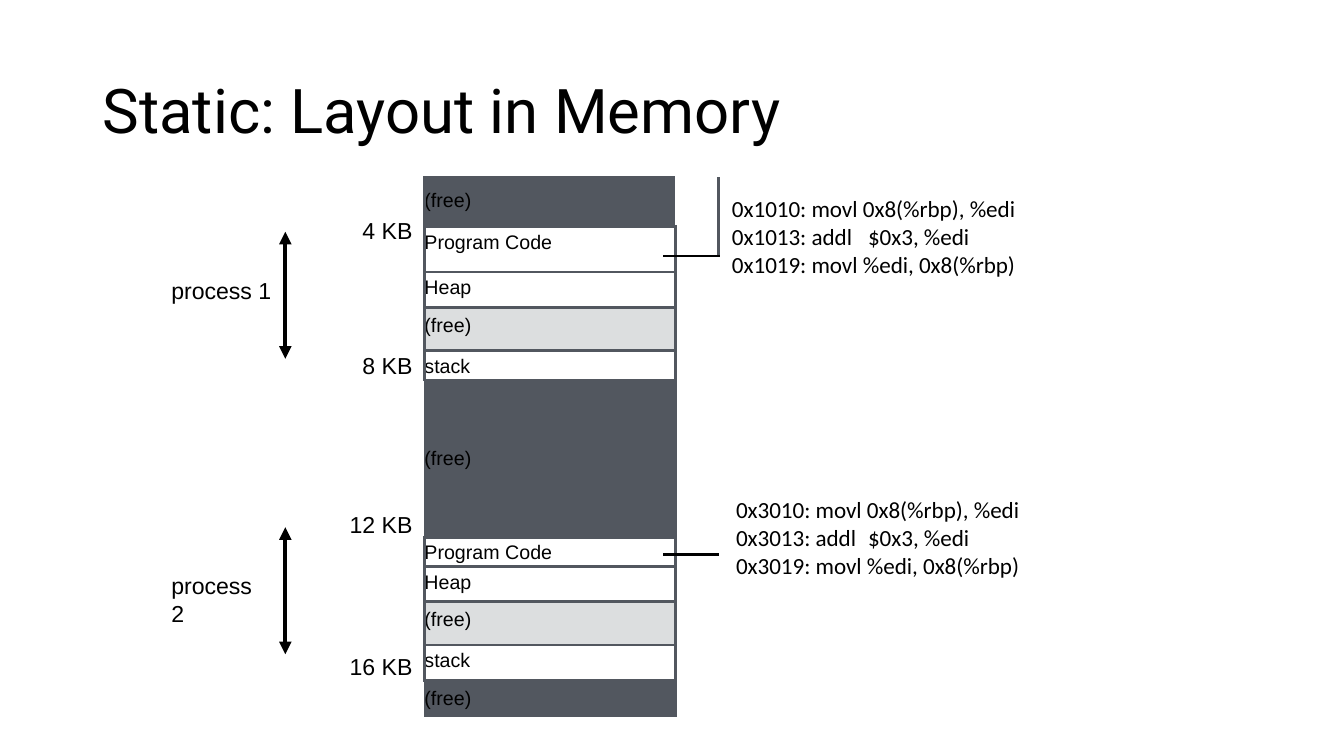
import pptx
import pptx.util
import pptx.dml.color
import pptx.enum.shapes
import pptx.enum.text
import pptx.oxml
import pptx.oxml.ns

PX = 9144  # EMU in one px, 100 px to the inch
GREY, PALE, WHITE, BLACK = "52575F", "DCDEDF", "FFFFFF", "000000"
qn = pptx.oxml.ns.qn
Align = pptx.enum.text.PP_ALIGN


def color(hex_text):
    return pptx.dml.color.RGBColor.from_string(hex_text)


def add_text(page, left, top, width, height, lines, font, align=Align.LEFT):
    box = page.shapes.add_textbox(left * PX, top * PX, width * PX, height * PX)
    frame = box.text_frame
    frame.word_wrap = True
    frame.margin_left = frame.margin_right = frame.margin_bottom = 0
    frame.margin_top = 2 * PX
    frame.text = "\n".join(lines)
    for para in frame.paragraphs:
        para.alignment = align
        para.font.name = font
        para.font.size = pptx.util.Pt(16.5)
        para.font.color.rgb = color(BLACK)
    return box


deck = pptx.Presentation()
deck.slide_width, deck.slide_height = 1333 * PX, 750 * PX
page = deck.slides.add_slide(deck.slide_layouts[5])

# Title
title = page.shapes.title
title.left, title.top, title.width, title.height = 92 * PX, 40 * PX, 1150 * PX, 145 * PX
title.text_frame.text = "Static: Layout in Memory"
title.text_frame.auto_size = pptx.enum.text.MSO_AUTO_SIZE.NONE
title.text_frame.vertical_anchor = pptx.enum.text.MSO_ANCHOR.MIDDLE
heading = title.text_frame.paragraphs[0]
heading.alignment = Align.LEFT
heading.line_spacing = 0.9
heading.font.name = "Roboto"
heading.font.size = pptx.util.Pt(44)
heading.font.color.rgb = color(BLACK)

# Memory table: label, fill, top inset, row heights
regions = [
    ("(free)", GREY, 12, [49]),
    ("Program Code", WHITE, 5, [29, 16]),
    ("Heap", WHITE, 5, [35]),
    ("(free)", PALE, 7, [43]),
    ("stack", WHITE, 5, [29]),
    ("(free)", GREY, 0, [156]),
    ("Program Code", WHITE, 5, [17, 12]),
    ("Heap", WHITE, 5, [35]),
    ("(free)", PALE, 7, [43]),
    ("stack", WHITE, 5, [35]),
    ("(free)", GREY, 7, [37]),
]
column_widths = [237, 12, 43]
row_heights = [height for region in regions for height in region[3]]
frame = page.shapes.add_table(len(row_heights), len(column_widths), 421 * PX, 176 * PX,
                              sum(column_widths) * PX, sum(row_heights) * PX)
table = frame.table
table.first_row = table.horz_banding = False
table._tbl.tblPr.find(qn("a:tableStyleId")).text = "{2D5ABB26-0587-4C30-8999-92F81FD0307C}"
for column, width in zip(table.columns, column_widths):
    column.width = width * PX
for row, height in zip(table.rows, row_heights):
    row.height = height * PX

# Fill and borders of every cell, listed by (row, column)
fills, borders = {}, {}
texts = []
pointer_rows = []
row_index = 0
for label, fill, inset, heights in regions:
    texts.append((row_index, label, inset))
    outlined = fill != GREY or row_index == 0
    last_row = row_index + len(heights) - 1
    for r in range(row_index, last_row + 1):
        for c in (0, 1):
            fills[r, c] = fill
            borders[r, c] = {}
            if outlined:
                borders[r, c]["L" if c == 0 else "R"] = GREY
                if r == row_index:
                    borders[r, c]["T"] = GREY
                if r == last_row:
                    borders[r, c]["B"] = GREY
        borders[r, 2] = {"R": GREY} if r < 2 else {}
    if len(heights) == 2:
        pointer_rows.append(row_index)
        table.cell(row_index, 0).merge(table.cell(last_row, 0))
    else:
        table.cell(row_index, 0).merge(table.cell(row_index, 1))
    row_index = last_row + 1

# Pointer lines run through the narrow columns
for r in pointer_rows:
    for c in (1, 2):
        borders[r, c]["B"] = borders[r + 1, c]["T"] = BLACK
for first, last in ((0, 1), (2, 7), (8, 12)):
    table.cell(first, 2).merge(table.cell(last, 2))

for (r, c), edges in borders.items():
    cell = table.cell(r, c)
    cell.margin_left = cell.margin_right = cell.margin_top = cell.margin_bottom = 0
    cell.text_frame.paragraphs[0].font.size = pptx.util.Pt(4)
    end = pptx.oxml.parse_xml(
        '<a:endParaRPr xmlns:a="%s" sz="400"/>' % pptx.oxml.ns.namespaces["a"]
        if hasattr(pptx.oxml.ns, "namespaces") and isinstance(pptx.oxml.ns.namespaces, dict)
        else '<a:endParaRPr xmlns:a="http://schemas.openxmlformats.org/drawingml/2006/main" sz="400"/>')
    cell.text_frame.paragraphs[0]._p.append(end)
    for side in "LRTB":
        if side in edges:
            cell._tc.get_or_add_tcPr().append(pptx.oxml.parse_xml(
                f'<a:ln{side} xmlns:a="http://schemas.openxmlformats.org/drawingml/2006/main" w="28575">'
                f'<a:solidFill><a:srgbClr val="{edges[side]}"/></a:solidFill></a:ln{side}>'))
    if (r, c) in fills:
        cell.fill.solid()
        cell.fill.fore_color.rgb = color(fills[r, c])

for r, label, inset in texts:
    cell = table.cell(r, 0)
    cell.margin_top = inset * PX
    if inset == 0:
        cell.vertical_anchor = pptx.enum.text.MSO_ANCHOR.MIDDLE
    para = cell.text_frame.paragraphs[0]
    para.text = label
    para.font.name = "Arial"
    para.font.size = pptx.util.Pt(14)
    para.font.color.rgb = color(BLACK)

# Process extents
for top in (230, 523):
    arrow = page.shapes.add_connector(pptx.enum.shapes.MSO_CONNECTOR.STRAIGHT,
                                      283 * PX, top * PX, 283 * PX, (top + 126) * PX)
    arrow.line.width = pptx.util.Pt(3)
    arrow.line.color.rgb = color(BLACK)
    line = arrow.line._get_or_add_ln()
    for end_name in ("a:headEnd", "a:tailEnd"):
        pptx.oxml.ns.qn(end_name)
        line.append(line.makeelement(qn(end_name), {"type": "triangle"}))
    shape_properties = arrow._element.spPr
    shape_properties.append(shape_properties.makeelement(qn("a:effectLst"), {}))

# Process names and addresses
add_text(page, 170, 272, 110, 31, ["process 1"], "Arial")
add_text(page, 170, 565, 93, 59, ["process 2"], "Arial")
for label, top in (("4 KB", 213), ("8 KB", 347), ("12 KB", 504), ("16 KB", 645)):
    add_text(page, 328, top, 81, 31, [label], "Arial", Align.RIGHT)

# Instructions of each process
for base, left, top in (("0x1", 726, 191), ("0x3", 730, 489)):
    lines = [f"{base}010: movl 0x8(%rbp), %edi",
             f"{base}013: addl\t$0x3, %edi",
             f"{base}019: movl %edi, 0x8(%rbp)"]
    listing = add_text(page, left, top, 291, 86, lines, "Calibri")
    for para in listing.text_frame.paragraphs:
        para.line_spacing = 1.01
    properties = listing.text_frame.paragraphs[1]._p.get_or_add_pPr()
    stops = properties.makeelement(qn("a:tabLst"), {})
    stops.append(stops.makeelement(qn("a:tab"), {"pos": str((861 - left) * PX), "algn": "l"}))
    properties.find(qn("a:defRPr")).addprevious(stops)

deck.save("out.pptx")
